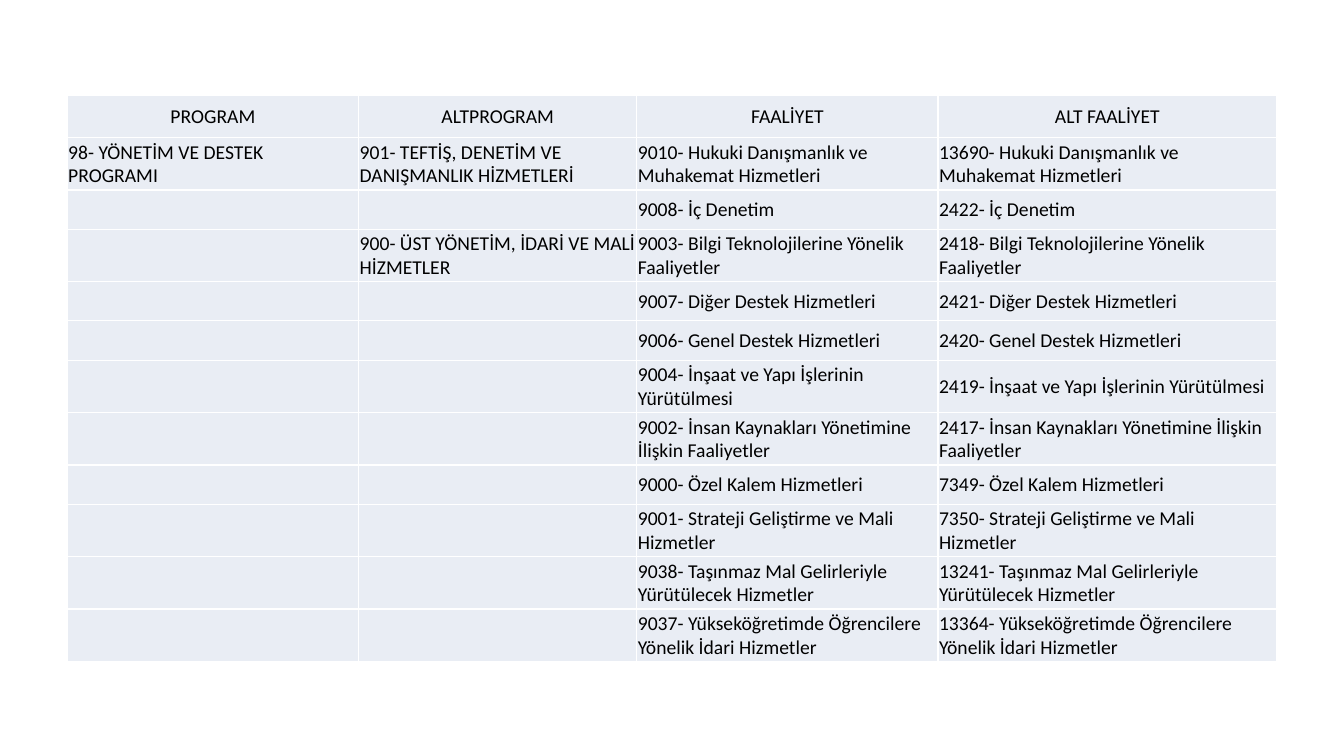
from lxml.etree import SubElement
from pptx import Presentation
from pptx.dml.color import RGBColor
from pptx.enum.text import MSO_ANCHOR, PP_ALIGN
from pptx.oxml.ns import qn
from pptx.util import Inches, Pt

BLACK = RGBColor(0x00, 0x00, 0x00)
WHITE = RGBColor(0xFF, 0xFF, 0xFF)
PALE_BLUE = RGBColor(0xE9, 0xED, 0xF4)

HEADINGS = ["PROGRAM", "ALTPROGRAM", "FAALİYET", "ALT FAALİYET"]
PROGRAM = "98- YÖNETİM VE DESTEK PROGRAMI"
# Subprogram, then its activities: code, sub-activity code, shared name
SUBPROGRAMS = [
    ("901- TEFTİŞ, DENETİM VE DANIŞMANLIK HİZMETLERİ", [
        (9010, 13690, "Hukuki Danışmanlık ve Muhakemat Hizmetleri"),
        (9008, 2422, "İç Denetim"),
    ]),
    ("900- ÜST YÖNETİM, İDARİ VE MALİ HİZMETLER", [
        (9003, 2418, "Bilgi Teknolojilerine Yönelik Faaliyetler"),
        (9007, 2421, "Diğer Destek Hizmetleri"),
        (9006, 2420, "Genel Destek Hizmetleri"),
        (9004, 2419, "İnşaat ve Yapı İşlerinin Yürütülmesi"),
        (9002, 2417, "İnsan Kaynakları Yönetimine İlişkin Faaliyetler"),
        (9000, 7349, "Özel Kalem Hizmetleri"),
        (9001, 7350, "Strateji Geliştirme ve Mali Hizmetler"),
        (9038, 13241, "Taşınmaz Mal Gelirleriyle Yürütülecek Hizmetler"),
        (9037, 13364, "Yükseköğretimde Öğrencilere Yönelik İdari Hizmetler"),
    ]),
]

# Grid: columns in percent of the table width, rows in grid units
COLUMN_PERCENTS = [24.1, 23, 24.9, 28]
HEADER_ROWS, ONE_LINE_ROWS, TWO_LINE_ROWS = 3.2, 3, 4
LONGEST_LINE = 30


class Page:
    """The current slide and its style."""

    font_name = "Calibri"
    font_size = Pt(14)
    row_unit = Inches(0.13)

    def __init__(self, deck):
        self.width = deck.slide_width
        self.slide = deck.slides.add_slide(deck.slide_layouts[6])

    def add_table(self, left, top, width, rows, heights):
        """Left and width are shares of the slide; top and heights are grid rows."""
        table_width = self.width * width
        frame = self.slide.shapes.add_table(
            len(rows), len(COLUMN_PERCENTS), int(self.width * left),
            int(self.row_unit * top), int(table_width),
            int(self.row_unit * sum(heights)))
        table = frame.table
        table.first_row = table.horz_banding = False
        for column, percent in zip(table.columns, COLUMN_PERCENTS):
            column.width = int(table_width * percent / 100)
        for row, height in zip(table.rows, heights):
            row.height = int(self.row_unit * height)
        for row_index, texts in enumerate(rows):
            align = PP_ALIGN.LEFT if row_index else PP_ALIGN.CENTER
            for column_index, text in enumerate(texts):
                self.fill_cell(table.cell(row_index, column_index), text, align)

    def fill_cell(self, cell, text, align):
        cell.margin_left = cell.margin_right = cell.margin_top = Inches(0.01)
        cell.margin_bottom = 0
        cell.vertical_anchor = MSO_ANCHOR.MIDDLE
        # Borders come before the fill in the cell properties
        self.add_borders(cell)
        cell.fill.solid()
        cell.fill.fore_color.rgb = PALE_BLUE
        if text:
            para = cell.text_frame.paragraphs[0]
            para.alignment = align
            span = para.add_run()
            span.text = text
            span.font.name = self.font_name
            span.font.size = self.font_size
            span.font.bold = False
            span.font.color.rgb = BLACK

    def add_borders(self, cell):
        properties = cell._tc.get_or_add_tcPr()
        for side in ("a:lnL", "a:lnR", "a:lnT", "a:lnB"):
            line = SubElement(properties, qn(side), w=str(Pt(1)))
            fill = SubElement(line, qn("a:solidFill"))
            SubElement(fill, qn("a:srgbClr"), val=str(WHITE))


def main():
    deck = Presentation()
    deck.slide_width, deck.slide_height = Inches(13.33), Inches(7.5)
    page = Page(deck)

    # Programs and subprograms are named only on their first row
    rows, heights = [HEADINGS], [HEADER_ROWS]
    program = PROGRAM
    for subprogram, activities in SUBPROGRAMS:
        for code, sub_code, name in activities:
            rows.append([program, subprogram, f"{code}- {name}", f"{sub_code}- {name}"])
            heights.append(TWO_LINE_ROWS if len(name) > LONGEST_LINE else ONE_LINE_ROWS)
            program = subprogram = ""

    # Programme table
    page.add_table(left=0.05, top=7.3, width=0.9, rows=rows, heights=heights)
    deck.save("out.pptx")


if __name__ == "__main__":
    main()
